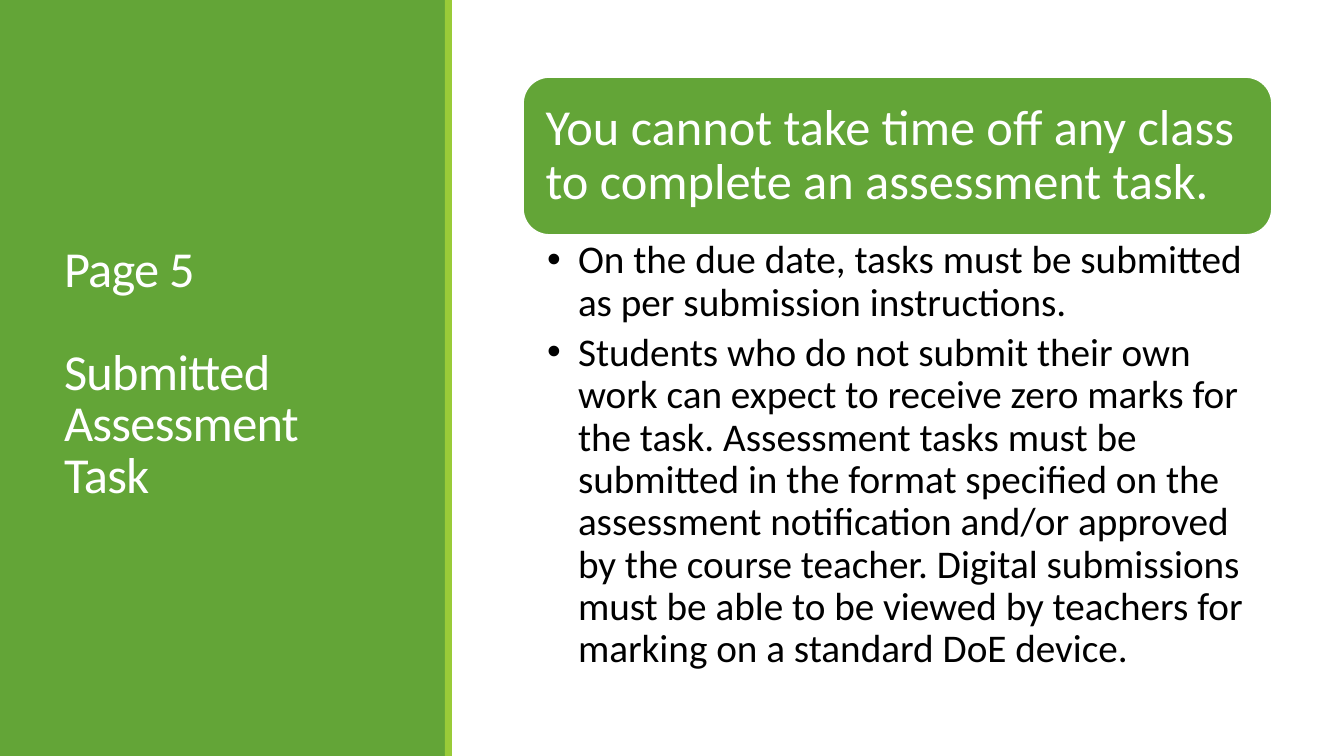
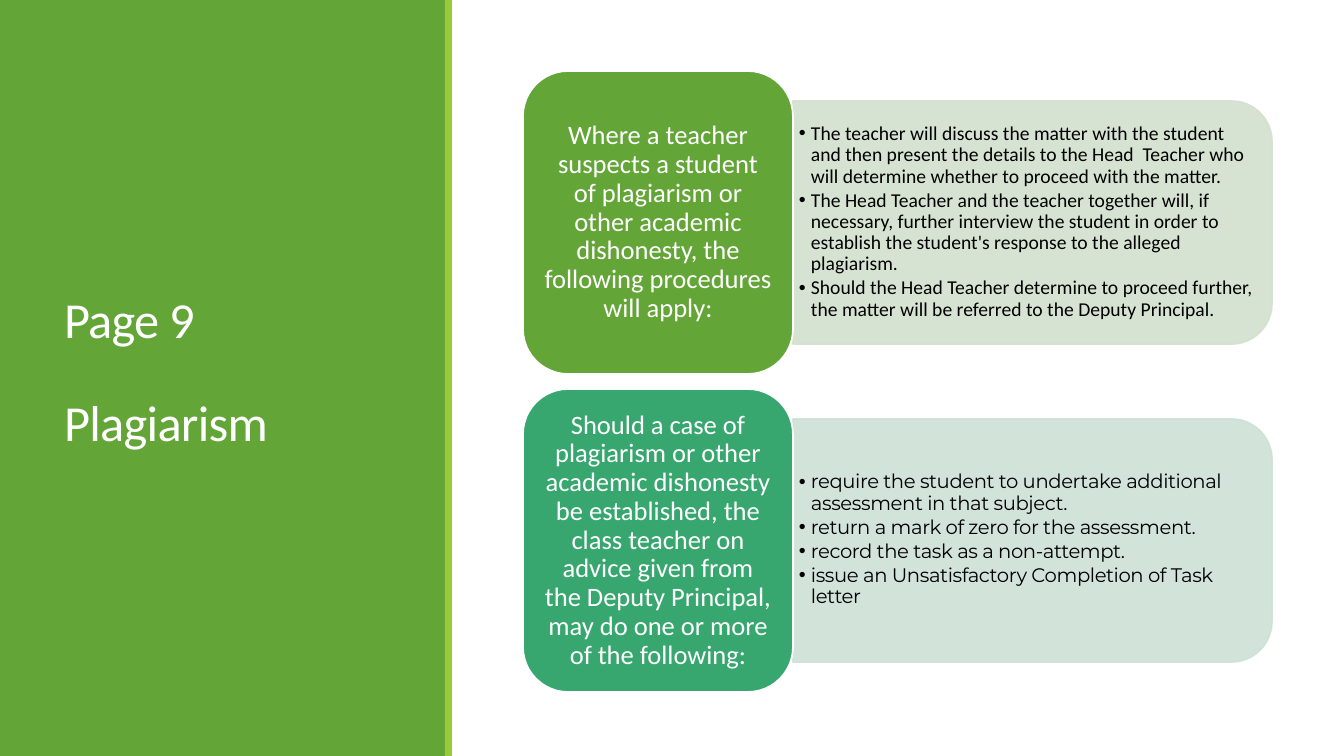
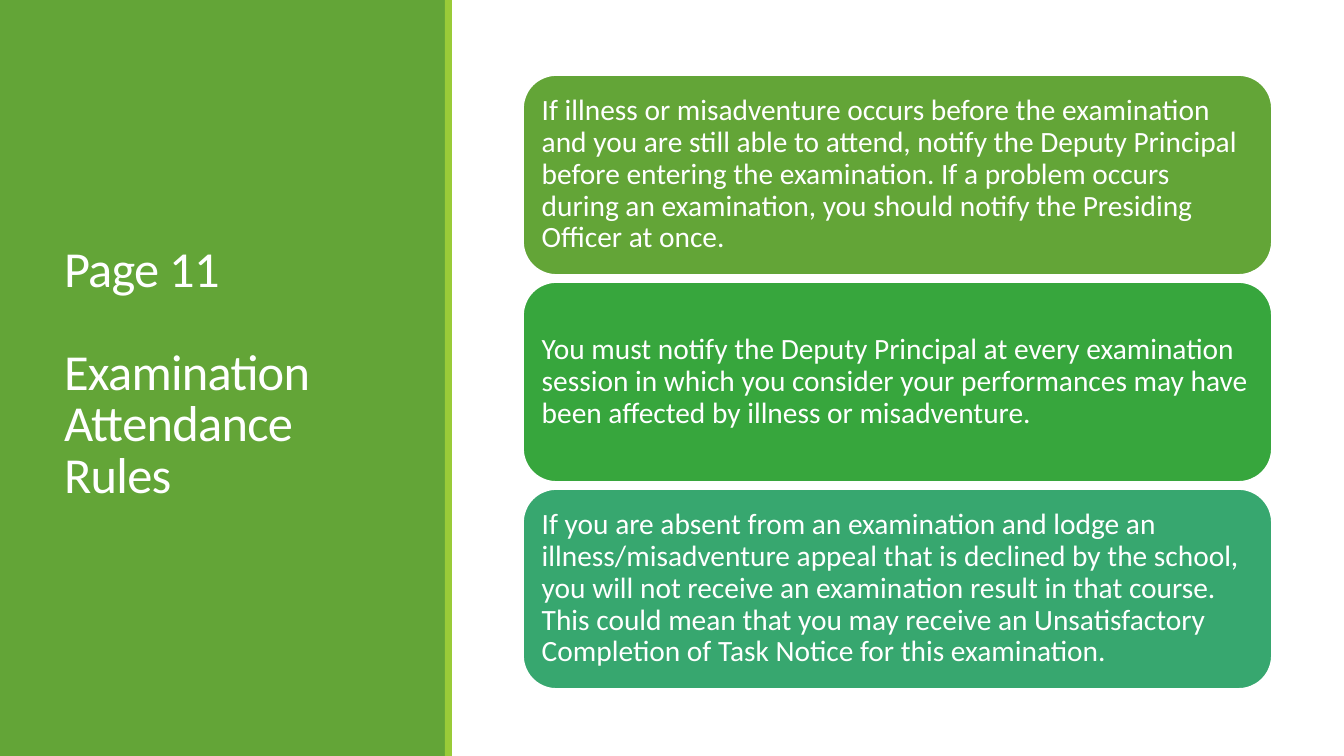
from dataclasses import dataclass

from lxml.etree import SubElement
from pptx import Presentation
from pptx.dml.color import RGBColor
from pptx.enum.shapes import MSO_SHAPE as Preset
from pptx.enum.text import MSO_ANCHOR as Anchor, MSO_AUTO_SIZE as AutoSize, PP_ALIGN as Align
from pptx.oxml.ns import qn
from pptx.util import Emu, Pt

COLORS = {
    "white": "FFFFFF",
    "black": "000000",
    "green": "63A537",
    "lime": "99CB38",
    "emerald": "37A63D",
    "teal": "37A76F",
    "pale_green": "D3E1CE",
    "pale_teal": "CEE1D5",
}
PX = 914400 / 100.8
SLIDE_W, SLIDE_H = 1344, 756
CONTENT_X, CONTENT_W = 523, 749
TITLE_ONLY, ONE_LIST, TWO_LISTS = 5, 1, 3


@dataclass(frozen=True)
class Box:
    x: int
    y: int
    w: int
    h: int


@dataclass(frozen=True)
class TextStyle:
    size: int
    color: str = "white"
    font: str = "Calibri"
    align: Align = Align.LEFT
    line_spacing: float = 0.9
    tracking: float = 0


@dataclass(frozen=True)
class ListStyle:
    text: TextStyle
    indent: int
    gap: float  # space after a paragraph, as a share of the text size
    insets: tuple[int, int, int, int]
    anchor: Anchor


@dataclass(frozen=True)
class Procedure:
    """A card with the list of steps that follows from it."""
    card_color: str
    tray_color: str
    lead: str
    steps: list[str]
    font: str = "Calibri"
    tracking: float = 0


TITLE_BOX = Box(54, 57, 340, 636)
TITLE_STYLE = TextStyle(36, line_spacing=0.85, tracking=-0.5)

SUBMISSION_RULE = "You cannot take time off any class to complete an assessment task."
SUBMISSION_POINTS = [
    "On the due date, tasks must be submitted as per submission instructions.",
    "Students who do not submit their own work can expect to receive zero marks for the task. "
    "Assessment tasks must be submitted in the format specified on the assessment notification "
    "and/or approved by the course teacher. Digital submissions must be able to be viewed by "
    "teachers for marking on a standard DoE device.",
]
PROCEDURES = [
    Procedure(
        "green", "pale_green",
        "Where a teacher suspects a student of plagiarism or other academic dishonesty, "
        "the following procedures will apply:",
        [
            "The teacher will discuss the matter with the student and then present the details "
            "to the Head  Teacher who will determine whether to proceed with the matter.",
            "The Head Teacher and the teacher together will, if necessary, further interview the "
            "student in order to establish the student's response to the alleged plagiarism.",
            "Should the Head Teacher determine to proceed further, the matter will be referred "
            "to the Deputy Principal.",
        ],
    ),
    Procedure(
        "teal", "pale_teal",
        "Should a case of plagiarism or other academic dishonesty be established, the class "
        "teacher on advice given from the Deputy Principal, may do one or more of the following:",
        [
            "require the student to undertake additional assessment in that subject.",
            "return a mark of zero for the assessment.",
            "record the task as a non-attempt.",
            "issue an Unsatisfactory Completion of Task letter",
        ],
        font="Montserrat", tracking=-0.3,
    ),
]
EXAM_RULES = [
    ("green",
     "If illness or misadventure occurs before the examination and you are still able to attend, "
     "notify the Deputy Principal before entering the examination. If a problem occurs during an "
     "examination, you should notify the Presiding Officer at once."),
    ("emerald",
     "You must notify the Deputy Principal at every examination session in which you consider "
     "your performances may have been affected by illness or misadventure."),
    ("teal",
     "If you are absent from an examination and lodge an illness/misadventure appeal that is "
     "declined by the school, you will not receive an examination result in that course. This "
     "could mean that you may receive an Unsatisfactory Completion of Task Notice for this "
     "examination."),
]


def px(n: float) -> Emu:
    return Emu(round(n * PX))


def rgb(name: str) -> RGBColor:
    return RGBColor.from_string(COLORS[name])


def place(sp, box: Box) -> None:
    """Move a placeholder to a box, in front of what is drawn so far."""
    sp.left, sp.top, sp.width, sp.height = map(px, (box.x, box.y, box.w, box.h))
    sp.element.getparent().append(sp.element)


def write(tf, texts: list[str], style: TextStyle, insets: tuple, anchor: Anchor) -> None:
    tf.word_wrap = True
    tf.auto_size = AutoSize.NONE
    tf.vertical_anchor = anchor
    tf.margin_left, tf.margin_top, tf.margin_right, tf.margin_bottom = map(px, insets)
    for i, text in enumerate(texts):
        p = tf.add_paragraph() if i else tf.paragraphs[0]
        p.text = text
        p.alignment = style.align
        p.line_spacing = style.line_spacing
        p.space_before = Pt(0)
        p.font.size = Pt(style.size)
        p.font.name = style.font
        p.font.color.rgb = rgb(style.color)
        if style.tracking:
            p.font._rPr.set("spc", str(round(style.tracking * 100)))


def add_shape(slide, preset: Preset, box: Box, fill: str, line: str | None = None):
    sp = slide.shapes.add_shape(preset, px(box.x), px(box.y), px(box.w), px(box.h))
    sp.shadow.inherit = False
    sp.fill.solid()
    sp.fill.fore_color.rgb = rgb(fill)
    if line:
        sp.line.color.rgb = rgb(line)
        sp.line.width = Pt(1.25)
    else:
        sp.line.fill.background()
    return sp


def add_card(slide, box: Box, fill: str, text: str, style: TextStyle, insets: tuple) -> None:
    sp = add_shape(slide, Preset.ROUNDED_RECTANGLE, box, fill, "white")
    write(sp.text_frame, [text], style, insets, Anchor.MIDDLE)


def add_tray(slide, box: Box, fill: str) -> None:
    """Draw a see-through panel with its two right corners rounded."""
    upright = Box(box.x + (box.w - box.h) // 2, box.y - (box.w - box.h) // 2, box.h, box.w)
    sp = add_shape(slide, Preset.ROUND_2_SAME_RECTANGLE, upright, fill, fill)
    sp.rotation = 90
    for color in list(sp.element.spPr.iter(qn("a:srgbClr"))):
        SubElement(color, qn("a:alpha"), val="90000")


def fill_list(sp, box: Box, items: list[str], style: ListStyle) -> None:
    place(sp, box)
    write(sp.text_frame, items, style.text, style.insets, style.anchor)
    for p in sp.text_frame.paragraphs:
        p.space_after = Pt(style.text.size * style.gap)
        pPr = p._p.get_or_add_pPr()
        pPr.set("marL", str(px(style.indent)))
        pPr.set("indent", str(-px(style.indent)))


def add_slide(prs, layout: int, page: str, topic: str):
    """Add a slide with the side panel and its title."""
    slide = prs.slides.add_slide(prs.slide_layouts[layout])
    add_shape(slide, Preset.RECTANGLE, Box(0, 0, 446, SLIDE_H), "green")
    add_shape(slide, Preset.RECTANGLE, Box(445, 0, 7, SLIDE_H), "lime")
    title = slide.shapes.title
    place(title, TITLE_BOX)
    write(title.text_frame, [page, topic], TITLE_STYLE, (10, 5, 10, 5), Anchor.MIDDLE)
    title.text_frame.paragraphs[1].space_before = Pt(37)
    return slide


def add_submission_slide(prs) -> None:
    slide = add_slide(prs, ONE_LIST, "Page 5", "Submitted Assessment Task")
    card = Box(CONTENT_X, 77, CONTENT_W, 158)
    add_card(slide, card, "green", SUBMISSION_RULE, TextStyle(36), (15,) * 4)
    points = ListStyle(TextStyle(28, "black"), 31, 0.2, (24, 5, 28, 5), Anchor.TOP)
    fill_list(slide.placeholders[1], Box(CONTENT_X, card.y + card.h, CONTENT_W, 452),
              SUBMISSION_POINTS, points)


def add_plagiarism_slide(prs) -> None:
    slide = add_slide(prs, TWO_LISTS, "Page 9", "Plagiarism")
    card_w, card_h, tray_h, list_h = 270, 303, 243, 220
    tray_x = CONTENT_X + card_w
    lead_style = TextStyle(19, align=Align.CENTER)
    for i, item in enumerate(PROCEDURES):
        top = 71 + i * 318
        mid = top + card_h // 2
        add_tray(slide, Box(tray_x, mid - tray_h // 2, CONTENT_W - card_w, tray_h),
                 item.tray_color)
        text = TextStyle(14, "black", item.font, tracking=item.tracking)
        fill_list(slide.placeholders[i + 1], Box(tray_x, mid - list_h // 2, 468, list_h),
                  item.steps, ListStyle(text, 12, 0.15, (6, 3, 6, 3), Anchor.MIDDLE))
        add_card(slide, Box(CONTENT_X, top, card_w, card_h), item.card_color, item.lead,
                 lead_style, (8, 4, 8, 4))


def add_examination_slide(prs) -> None:
    slide = add_slide(prs, TITLE_ONLY, "Page 11", "Examination Attendance Rules")
    for i, (color, rule) in enumerate(EXAM_RULES):
        add_card(slide, Box(CONTENT_X, 75 + i * 207, CONTENT_W, 200), color, rule,
                 TextStyle(21), (9,) * 4)


def main() -> None:
    prs = Presentation()
    prs.slide_width, prs.slide_height = px(SLIDE_W), px(SLIDE_H)
    add_submission_slide(prs)
    add_plagiarism_slide(prs)
    add_examination_slide(prs)
    prs.save("out.pptx")


if __name__ == "__main__":
    main()
